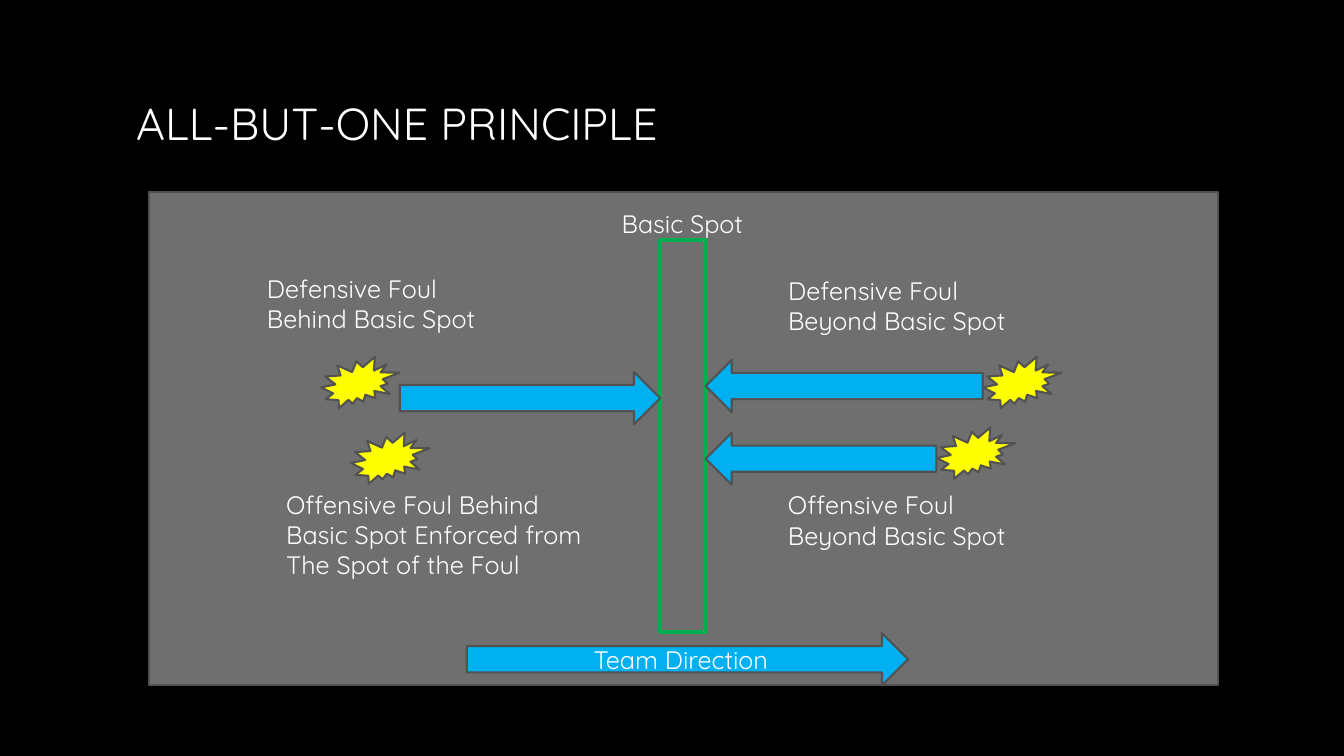
"""Builds the slide that explains the all-but-one principle of foul enforcement."""
import dataclasses

import pptx
import pptx.dml.color
import pptx.enum.shapes
import pptx.enum.text
import pptx.util

Pt = pptx.util.Pt
SHAPE = pptx.enum.shapes.MSO_SHAPE
ALIGN = pptx.enum.text.PP_ALIGN
ANCHOR = pptx.enum.text.MSO_ANCHOR


@dataclasses.dataclass(frozen=True)
class Theme:
    font: str = "Quicksand"
    title_size: int = 32
    text_size: int = 18
    background: str = "000000"
    text: str = "FFFFFF"
    field: str = "6F6F6F"
    outline: str = "525252"
    spot: str = "00B050"
    arrow: str = "00B0F0"
    flag: str = "FFFF00"


class FoulSlide:
    def __init__(self, deck, theme):
        self.theme = theme
        self.slide = deck.slides.add_slide(deck.slide_layouts[5])
        backdrop = self.slide.background.fill
        backdrop.solid()
        backdrop.fore_color.rgb = self.color(theme.background)

    def color(self, value):
        return pptx.dml.color.RGBColor.from_string(value)

    def fill_text(self, frame, lines, size, align, anchor):
        frame.word_wrap = True
        frame.auto_size = pptx.enum.text.MSO_AUTO_SIZE.NONE
        frame.vertical_anchor = anchor
        for index, line in enumerate(lines):
            paragraph = frame.add_paragraph() if index else frame.paragraphs[0]
            paragraph.alignment = align
            run = paragraph.add_run()
            run.text = line
            run.font.name = self.theme.font
            run.font.size = Pt(size)
            run.font.color.rgb = self.color(self.theme.text)

    def title(self, wording, left, top, width, height):
        heading = self.slide.shapes.title
        heading.left, heading.top = Pt(left), Pt(top)
        heading.width, heading.height = Pt(width), Pt(height)
        self.fill_text(heading.text_frame, [wording], self.theme.title_size,
                       ALIGN.LEFT, ANCHOR.MIDDLE)

    def shape(self, kind, left, top, width, height, fill, line=None, weight=1.5):
        figure = self.slide.shapes.add_shape(
            kind, Pt(left), Pt(top), Pt(width), Pt(height))
        figure.shadow.inherit = False
        figure.fill.solid()
        figure.fill.fore_color.rgb = self.color(fill)
        figure.line.color.rgb = self.color(line or self.theme.outline)
        figure.line.width = Pt(weight)
        return figure

    def arrow(self, start, end, top, label=None):
        shaft = self.shape(SHAPE.RIGHT_ARROW, min(start, end), top,
                           abs(end - start), 37.4, self.theme.arrow)
        if end < start:
            shaft.rotation = 180
        if label:
            self.fill_text(shaft.text_frame, [label], self.theme.text_size,
                           ALIGN.CENTER, ANCHOR.MIDDLE)

    def caption(self, lines, left, top, width, align=ALIGN.LEFT):
        height = 7.2 + 21.8 * len(lines)
        box = self.slide.shapes.add_textbox(Pt(left), Pt(top), Pt(width), Pt(height))
        self.fill_text(box.text_frame, lines, self.theme.text_size, align, ANCHOR.TOP)

    def flag(self, left, top, width):
        self.shape(SHAPE.EXPLOSION2, left, top, width, 36.7, self.theme.flag)


def main():
    deck = pptx.Presentation()
    deck.slide_width, deck.slide_height = Pt(960), Pt(540)
    theme = Theme()
    page = FoulSlide(deck, theme)

    spot_left, spot_width, flag_width = 471.6, 32.4, 56.2
    spot_right = spot_left + spot_width

    page.title("ALL-BUT-ONE PRINCIPLE", 90, 48.2, 780, 78.5)
    page.shape(SHAPE.RECTANGLE, 106.6, 137.2, 763.4, 352.2, theme.field)
    page.shape(SHAPE.RECTANGLE, spot_left, 171.4, spot_width, 280.1,
               theme.field, theme.spot, 3)
    page.caption(["Basic Spot"], 407.5, 145.4, 159.8, ALIGN.CENTER)
    page.arrow(333.4, 648.7, 452.2, "Team Direction")

    fouls = [
        (["Defensive Foul", "Behind Basic Spot"],
         (183.6, 191.5, 190.8), (229.3, 254.9), 265.7),
        (["Offensive Foul Behind", "Basic Spot Enforced from", "The Spot of the Foul"],
         (197.3, 345.6, 257.8), (250.6, 308.9), None),
        (["Defensive Foul", "Beyond Basic Spot"],
         (555.8, 193, 226), (702, 254.9), 257),
        (["Offensive Foul", "Beyond Basic Spot"],
         (555.8, 346.3, 254.2), (668.9, 305.3), 308.9),
    ]
    for lines, caption_place, (flag_left, flag_top), arrow_top in fouls:
        page.caption(lines, *caption_place)
        page.flag(flag_left, flag_top, flag_width)
        if arrow_top is None:
            continue
        if flag_left < spot_left:
            page.arrow(flag_left + flag_width, spot_left, arrow_top)
        else:
            page.arrow(flag_left, spot_right, arrow_top)

    deck.save("out.pptx")


if __name__ == "__main__":
    main()
